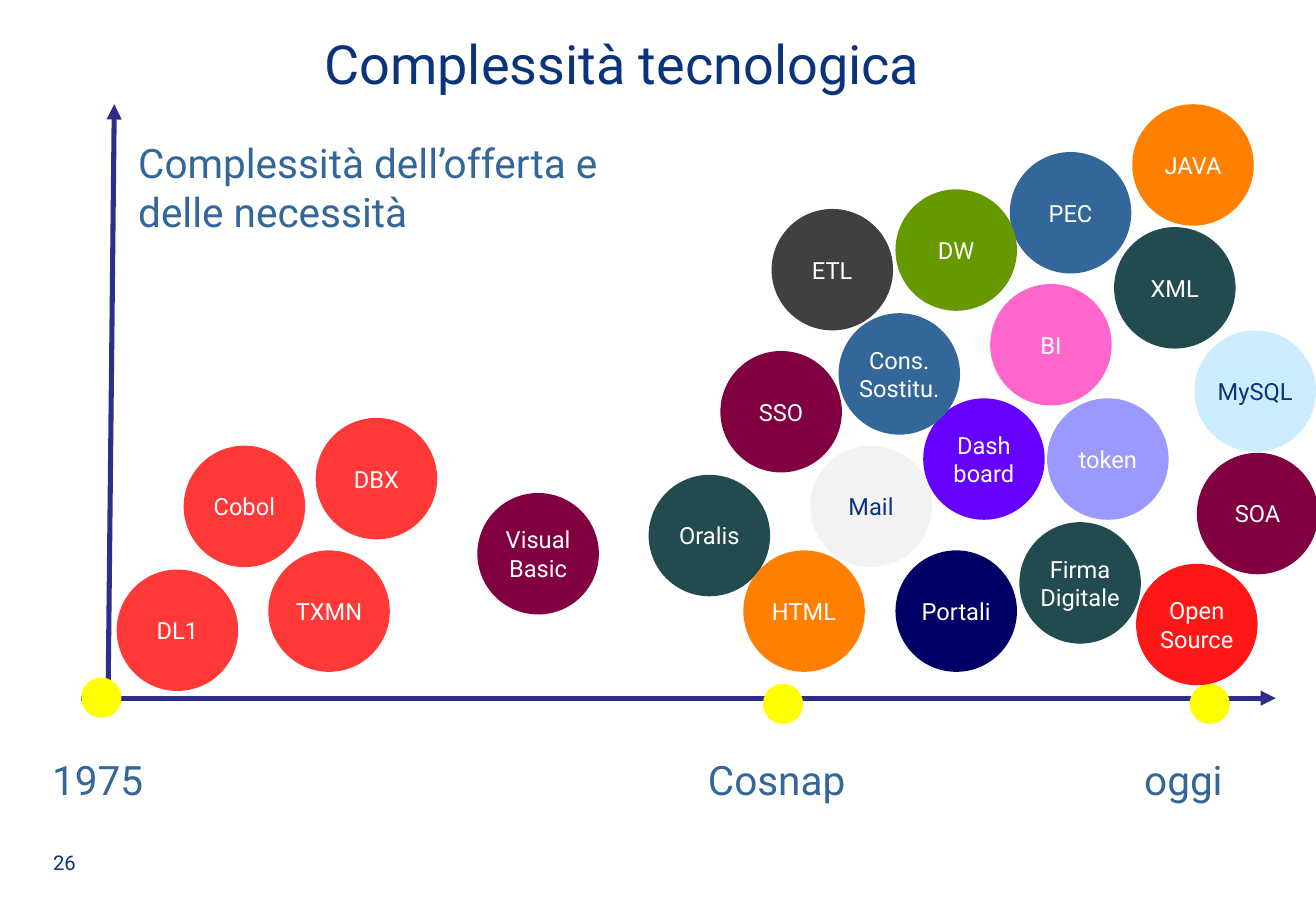
from lxml import etree
from pptx import Presentation
from pptx.dml.color import RGBColor
from pptx.enum.shapes import MSO_CONNECTOR, MSO_SHAPE
from pptx.enum.text import MSO_ANCHOR as ANCHOR, MSO_AUTO_SIZE as AUTO, PP_ALIGN as ALIGN
from pptx.oxml.ns import qn
from pptx.util import Cm, Pt

FONT = "Roboto"
WHITE = RGBColor(0xFF, 0xFF, 0xFF)
NAVY = RGBColor(0x0B, 0x33, 0x7B)
AXIS = RGBColor(0x2D, 0x2D, 0x8A)
STEEL = RGBColor(0x33, 0x66, 0x99)
YELLOW = RGBColor(0xFF, 0xFF, 0x00)
RED = RGBColor(0xFF, 0x00, 0x00)
PLUM = RGBColor(0x80, 0x00, 0x40)
GRAPHITE = RGBColor(0x40, 0x40, 0x40)
TEAL = RGBColor(0x22, 0x4B, 0x50)
LILAC = RGBColor(0x99, 0x99, 0xFF)
PALE_GREY = RGBColor(0xF2, 0xF2, 0xF2)
VIOLET = RGBColor(0x66, 0x00, 0xFF)
PINK = RGBColor(0xFF, 0x66, 0xCC)
MIDNIGHT = RGBColor(0x00, 0x00, 0x66)
ORANGE = RGBColor(0xFF, 0x80, 0x00)
GREEN = RGBColor(0x66, 0x99, 0x00)
SKY = RGBColor(0xCC, 0xEC, 0xFF)

BUBBLE = 2.54
DOT = 0.84
AXIS_Y = 12.42

# Text, left and top within the chart, fill, opacity in percent
TECHNOLOGIES = [
    ("Visual\nBasic", 8.28, 8.13, PLUM, 100),
    ("SSO", 13.36, 5.16, PLUM, 100),
    ("ETL", 14.43, 2.19, GRAPHITE, 100),
    ("SOA", 23.32, 7.29, PLUM, 100),
    ("Oralis", 11.86, 7.75, TEAL, 100),
    ("XML", 21.59, 2.57, TEAL, 100),
    ("Firma\nDigitale", 19.61, 8.74, TEAL, 100),
    ("token", 20.19, 6.15, LILAC, 100),
    ("Cobol", 2.14, 7.14, RED, 78),
    ("DL1", 0.74, 9.73, RED, 78),
    ("TXMN", 3.91, 9.33, RED, 78),
    ("DBX", 4.9, 6.56, RED, 78),
    ("Mail", 15.24, 7.14, PALE_GREY, 100),
    ("PEC", 19.41, 1, STEEL, 100),
    ("Dash\nboard", 17.6, 6.15, VIOLET, 100),
    ("Cons.\nSostitu.", 15.83, 4.37, STEEL, 100),
    ("BI", 19, 3.76, PINK, 100),
    ("Portali", 17.02, 9.33, MIDNIGHT, 100),
    ("JAVA", 21.97, 0, ORANGE, 100),
    ("HTML", 13.84, 9.33, ORANGE, 100),
    ("DW", 17.02, 1.78, GREEN, 100),
    ("Open\nSource", 22.05, 9.61, RED, 91),
    ("MySQL", 23.27, 4.73, SKY, 100),
]

# Label, label left and width, dot left and top
MILESTONES = [
    ("1975", -0.86, 2.74, 0, 11.99),
    ("Cosnap", 12.85, 3.43, 14.25, 12.12),
    ("oggi", 21.97, 2.74, 23.17, 12.12),
]


def write(tf, text, size=14, color=WHITE, align=ALIGN.LEFT, anchor=ANCHOR.TOP):
    tf.word_wrap = True
    tf.auto_size = AUTO.NONE
    tf.vertical_anchor = anchor
    for i, line in enumerate(text.split("\n")):
        p = tf.paragraphs[0] if i == 0 else tf.add_paragraph()
        p.alignment = align
        r = p.add_run()
        r.text = line
        r.font.name = FONT
        r.font.size = Pt(size)
        r.font.color.rgb = color


def add_text(slide, text, left, top, width, height, **fmt):
    tb = slide.shapes.add_textbox(Cm(left), Cm(top), Cm(width), Cm(height))
    write(tb.text_frame, text, **fmt)


def add_circle(slide, left, top, size, fill, opacity=100):
    sp = slide.shapes.add_shape(MSO_SHAPE.OVAL, Cm(left), Cm(top), Cm(size), Cm(size))
    sp.shadow.inherit = False
    sp.fill.solid()
    sp.fill.fore_color.rgb = fill
    sp.line.fill.background()
    if opacity < 100:
        clr = sp._element.spPr.find(qn("a:solidFill"))[0]
        etree.SubElement(clr, qn("a:alpha"), val=str(opacity * 1000))
    return sp


def add_arrow(slide, x1, y1, x2, y2):
    cx = slide.shapes.add_connector(MSO_CONNECTOR.STRAIGHT, Cm(x1), Cm(y1), Cm(x2), Cm(y2))
    cx.line.color.rgb = AXIS
    cx.line.width = Pt(3)
    ln = cx._element.spPr.find(qn("a:ln"))
    etree.SubElement(ln, qn("a:tailEnd"), type="triangle")
    etree.SubElement(cx._element.spPr, qn("a:effectLst"))


def add_title(slide, left, top, width, height):
    title = slide.shapes.title
    title.left, title.top, title.width, title.height = Cm(left), Cm(top), Cm(width), Cm(height)
    tf = title.text_frame
    tf.margin_left = tf.margin_right = tf.margin_top = tf.margin_bottom = 0
    write(tf, "Complessità tecnologica", size=32, color=NAVY)


def add_timeline(slide, left, top):
    # Axes
    add_arrow(slide, left + 0.56, top + AXIS_Y, left + 0.69, top)
    add_arrow(slide, left, top + AXIS_Y, left + 24.97, top + AXIS_Y)
    add_text(slide, "Complessità dell’offerta e delle necessità",
             left + 0.94, top + 0.59, 10.11, 2.31, size=24, color=STEEL)

    # Milestones
    for label, x, width, dot_x, dot_y in MILESTONES:
        add_circle(slide, left + dot_x, top + dot_y, DOT, YELLOW)
        add_text(slide, label, left + x, top + 13.49, width, 1.3, size=24, color=STEEL)


def add_technologies(slide, left, top):
    for text, x, y, fill, opacity in TECHNOLOGIES:
        sp = add_circle(slide, left + x, top + y, BUBBLE, fill, opacity)
        tf = sp.text_frame
        tf.margin_left = tf.margin_right = 0
        color = NAVY if fill in (PALE_GREY, SKY) else WHITE
        write(tf, text, color=color, align=ALIGN.CENTER, anchor=ANCHOR.MIDDLE)


def main():
    prs = Presentation()
    prs.slide_width, prs.slide_height = Cm(27.51), Cm(19.05)
    slide = prs.slides.add_slide(prs.slide_layouts[5])

    add_title(slide, 6.78, 0.64, 16.08, 1.7)
    add_timeline(slide, 1.7, 2.18)
    add_technologies(slide, 1.7, 2.18)

    # Page number
    add_text(slide, "26", 0.86, 17.65, 1.7, 0.84, size=12, color=NAVY)

    prs.save("out.pptx")


if __name__ == "__main__":
    main()
